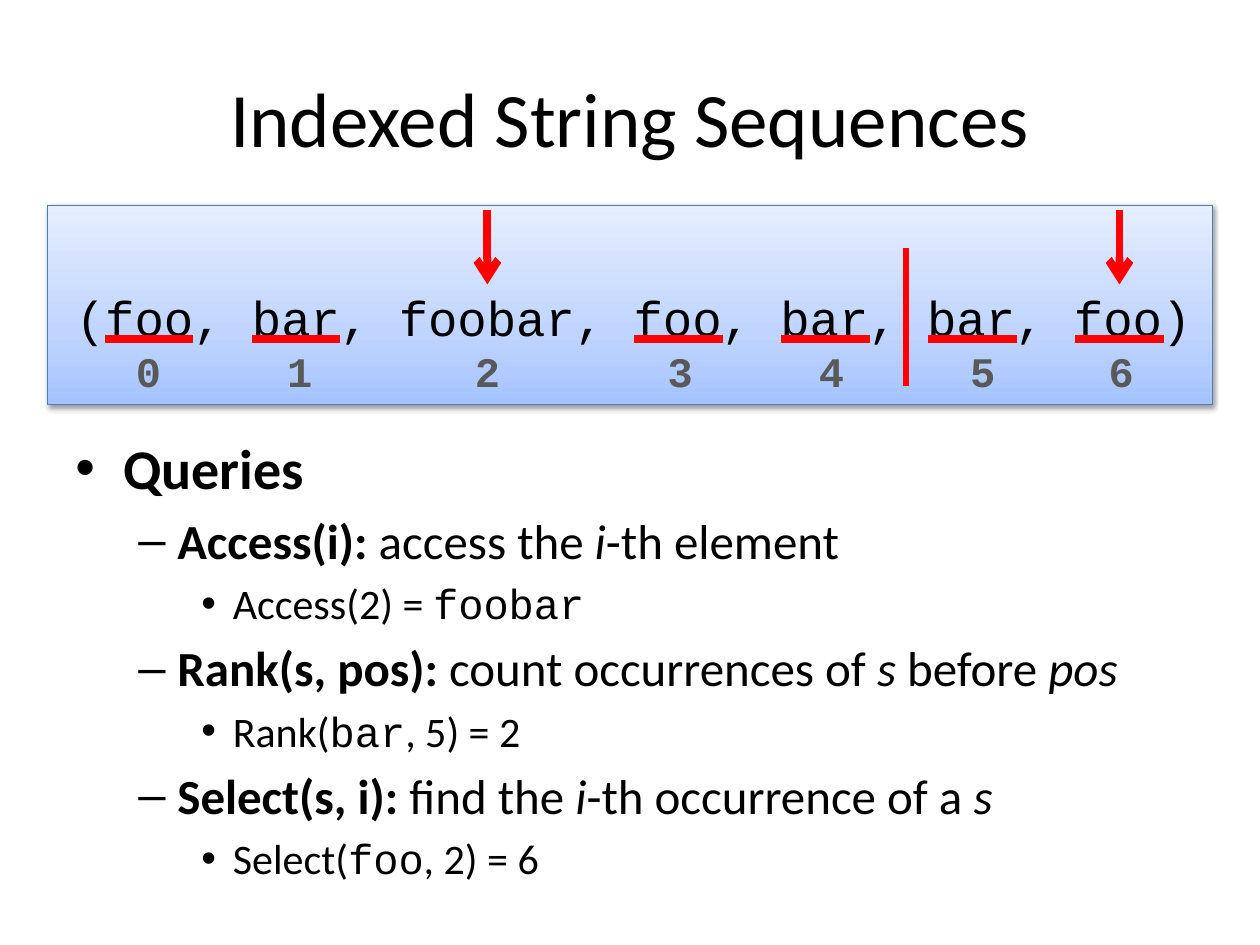
"""Build the slide on indexed string sequences and their queries."""
import pptx
import pptx.dml.color
import pptx.enum.shapes
import pptx.enum.text
import pptx.oxml
import pptx.util

HUES = {"ink": "000000", "mark": "FF0000", "edge": "4B7EBC", "index": "595959",
        "deep": "A4C4FF", "mid": "BFD4FF", "pale": "E6EEFF"}
SANS, MONO = "Calibri", "Courier New"
WIDE, HIGH = 10, 7.5

TITLE = "Indexed String Sequences"
WORDS = ["foo", "bar", "foobar", "foo", "bar", "bar", "foo"]
POINTED = [2, 6]
QUERIES = [
    (0, [("Queries", "bold")]),
    (1, [("Access(i):", "bold"), (" access the ", ""), ("i", "slant"), ("-th element", "")]),
    (2, [("Access(2) = ", ""), ("foobar", "code")]),
    (1, [("Rank(s, pos):", "bold"), (" count occurrences of ", ""), ("s", "slant"),
         (" before ", ""), ("pos", "slant")]),
    (2, [("Rank(", ""), ("bar", "code"), (", 5) = 2", "")]),
    (1, [("Select(s, i):", "bold"), (" find the ", ""), ("i", "slant"),
         ("-th occurrence of a ", ""), ("s", "slant")]),
    (2, [("Select(", ""), ("foo", "code"), (", 2) = 6", "")]),
]
STYLES = {"": {}, "bold": {"bold": True}, "slant": {"italic": True}, "code": {"name": MONO}}
LEVELS = [(32, 0.38, -0.38, "•"), (28, 0.81, -0.31, "–"), (24, 1.25, -0.25, "•")]

# Shares of the slide, in percent: left, top, width, height
AREAS = {"title": (5, 4, 90, 16.67), "panel": (3.75, 21.73, 92.5, 21.07),
         "body": (5, 45.2, 90, 50.8), "index": (7.8, 35.87, 87.2, 6.67)}
TABS = [0.2, 1.4, 2.89, 4.42, 5.62, 6.82, 7.92]
CELL, MIDDLE = 28 * 0.6 / 72 / WIDE * 100, 50.35
RULE, ARROW, SPLIT = 35.87, (22.2, 30.1), (71.9, 26.27, 40.8)


def across(share):
    return pptx.util.Inches(WIDE * share / 100)


def down(share):
    return pptx.util.Inches(HIGH * share / 100)


def place(name):
    left, top, width, height = AREAS[name]
    return across(left), down(top), across(width), down(height)


def tint(hue):
    return pptx.dml.color.RGBColor.from_string(HUES[hue])


def node(tag, inner="", **attrs):
    space = 'xmlns:a="http://schemas.openxmlformats.org/drawingml/2006/main"'
    pairs = " ".join(f'{key}="{value}"' for key, value in attrs.items())
    return pptx.oxml.parse_xml(f"<a:{tag} {space} {pairs}>{inner}</a:{tag}>")


def write(para, text, size, hue="ink", **form):
    run = para.add_run()
    run.text = text
    values = {"name": SANS, "size": pptx.util.Pt(size), "bold": False, "italic": False}
    for key, value in {**values, **form}.items():
        setattr(run.font, key, value)
    run.font.color.rgb = tint(hue)


def add_box(slide, name):
    frame = slide.shapes.add_textbox(*place(name)).text_frame
    frame.word_wrap = True
    return frame


def add_line(slide, start, end, width=4.5, arrow=False):
    kind = pptx.enum.shapes.MSO_CONNECTOR.STRAIGHT
    line = slide.shapes.add_connector(kind, across(start[0]), down(start[1]),
                                      across(end[0]), down(end[1]))
    line.line.color.rgb = tint("mark")
    line.line.width = pptx.util.Pt(width)
    if arrow:
        line.line._get_or_add_ln().append(node("tailEnd", type="arrow"))
    line._element.spPr.append(node("effectLst"))


def add_title(slide):
    frame = add_box(slide, "title")
    frame.vertical_anchor = pptx.enum.text.MSO_ANCHOR.MIDDLE
    para = frame.paragraphs[0]
    para.alignment = pptx.enum.text.PP_ALIGN.CENTER
    write(para, TITLE, 44)


def add_panel(slide):
    panel = slide.shapes.add_shape(pptx.enum.shapes.MSO_SHAPE.RECTANGLE, *place("panel"))
    panel.line.color.rgb = tint("edge")
    panel.line.width = pptx.util.Pt(0.75)
    stops = "".join(f'<a:gs pos="{pos}000"><a:srgbClr val="{HUES[hue]}"/></a:gs>'
                    for pos, hue in [(0, "deep"), (35, "mid"), (100, "pale")])
    fill = f'<a:gsLst>{stops}</a:gsLst><a:lin ang="16200000" scaled="0"/>'
    shade = ('<a:outerShdw blurRad="39370" dist="20320" dir="5400000" rotWithShape="0">'
             '<a:srgbClr val="000000"><a:alpha val="38000"/></a:srgbClr></a:outerShdw>')
    edge = panel.line._get_or_add_ln()
    edge.addprevious(node("gradFill", fill, rotWithShape=1))
    edge.addnext(node("effectLst", shade))
    frame = panel.text_frame
    frame.word_wrap = True
    frame.vertical_anchor = pptx.enum.text.MSO_ANCHOR.TOP
    frame.margin_top = pptx.util.Inches(0.65)
    para = frame.paragraphs[0]
    para.alignment = pptx.enum.text.PP_ALIGN.CENTER
    para._p.get_or_add_pPr().set("marL", str(pptx.util.Inches(0.06)))
    write(para, f"({', '.join(WORDS)})", 28, name=MONO)


def add_queries(slide):
    frame = add_box(slide, "body")
    for row, (level, parts) in enumerate(QUERIES):
        para = frame.add_paragraph() if row else frame.paragraphs[0]
        size, left, hang, mark = LEVELS[level]
        para.level = level
        para.space_before = pptx.util.Pt(size * 0.2)
        props = para._p.get_or_add_pPr()
        props.set("marL", str(pptx.util.Inches(left)))
        props.set("indent", str(pptx.util.Inches(hang)))
        props.append(node("buFont", typeface="Arial"))
        props.append(node("buChar", char=mark))
        for text, style in parts:
            write(para, text, size, **STYLES[style])


def add_index(slide):
    para = add_box(slide, "index").paragraphs[0]
    stops = node("tabLst")
    for tab in TABS:
        stops.append(node("tab", pos=pptx.util.Inches(tab), algn="l"))
    para._p.get_or_add_pPr().append(stops)
    text = "".join(f"\t{count}" for count in range(len(WORDS)))
    write(para, text, 24, "index", name=MONO, bold=True)


def add_marks(slide):
    total = len(", ".join(WORDS)) + 2
    left = MIDDLE - total * CELL / 2 + CELL
    for count, word in enumerate(WORDS):
        right = left + len(word) * CELL
        if word != "foobar":
            add_line(slide, (left, RULE), (right, RULE))
        if count in POINTED:
            mid = (left + right) / 2
            add_line(slide, (mid, ARROW[0]), (mid, ARROW[1]), arrow=True)
        left = right + 2 * CELL
    spot, top, foot = SPLIT
    add_line(slide, (spot, foot), (spot, top), 3)


def main():
    deck = pptx.Presentation()
    deck.slide_width, deck.slide_height = across(100), down(100)
    slide = deck.slides.add_slide(deck.slide_layouts[6])
    for step in (add_title, add_panel, add_queries, add_index, add_marks):
        step(slide)
    deck.save("out.pptx")


if __name__ == "__main__":
    main()
